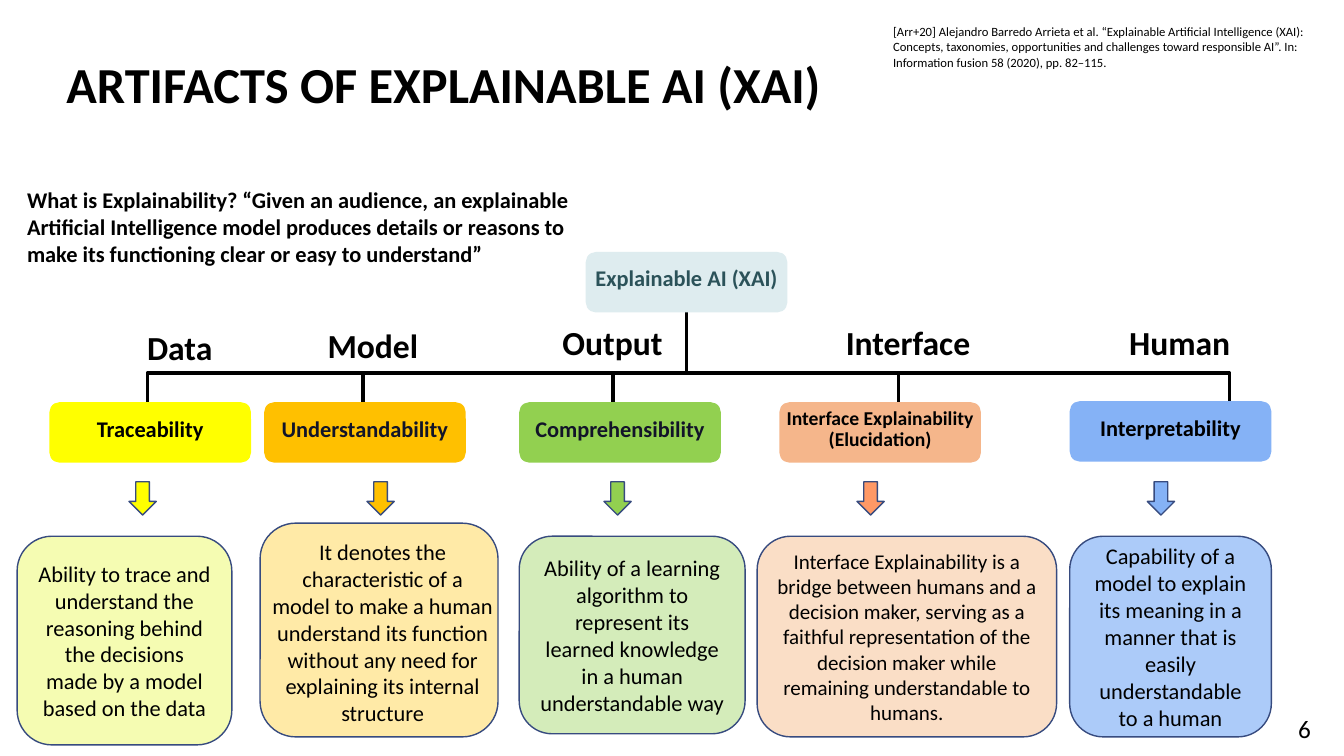
"""Build the slide on artifacts of explainable AI."""
import pptx
import pptx.dml.color
import pptx.enum.shapes
import pptx.enum.text
import pptx.oxml
import pptx.oxml.ns
import pptx.util

RGB = pptx.dml.color.RGBColor
KIND = pptx.enum.shapes.MSO_SHAPE
JOIN = pptx.enum.shapes.MSO_CONNECTOR
ANCHOR = pptx.enum.text.MSO_ANCHOR
ALIGN = pptx.enum.text.PP_ALIGN
SCALE = 9144
BLACK = RGB(0x00, 0x00, 0x00)
NAVY = RGB(0x12, 0x14, 0x29)
TEAL = RGB(0x2B, 0x52, 0x59)
MIST = RGB(0xDE, 0xEC, 0xEF)
EDGE = RGB(0x37, 0x4B, 0x7F)
YELLOW = RGB(0xFF, 0xFF, 0x00)
AMBER = RGB(0xFF, 0xC0, 0x00)
GREEN = RGB(0x92, 0xD0, 0x50)
PEACH = RGB(0xF5, 0xB6, 0x8B)
CORAL = RGB(0xFF, 0x99, 0x66)
BLUE = RGB(0x85, 0xB2, 0xF6)
LEMON = RGB(0xF5, 0xFC, 0xB2)
CREAM = RGB(0xFF, 0xEA, 0xA7)
MINT = RGB(0xD4, 0xEC, 0xBA)
SAND = RGB(0xFA, 0xDE, 0xC6)
SKY = RGB(0xAC, 0xCB, 0xF9)

TAGS = [
    ("Traceability", 49, 399, YELLOW, BLACK, 16),
    ("Understandability", 262, 399, AMBER, NAVY, 16),
    ("Comprehensibility", 515, 399, GREEN, NAVY, 16),
    ("Interface Explainability (Elucidation)", 773, 399, PEACH, BLACK, 14),
    ("Interpretability", 1061, 398, BLUE, BLACK, 16),
]
ARROWS = [(128, YELLOW), (364, AMBER), (599, GREEN), (850, CORAL), (1138, BLUE)]
CARDS = [
    ((17, 532, 213, 207), LEMON, 16,
     "Ability to trace and understand the reasoning behind the decisions "
     "made by a model based on the data"),
    ((258, 519, 236, 212), CREAM, 16, ""),
    ((515, 532, 224, 196), MINT, 16,
     "Ability of a learning algorithm to represent its learned knowledge "
     "in a human understandable way"),
    ((751, 532, 297, 199), SAND, 15,
     "Interface Explainability is a bridge between humans and a decision "
     "maker, serving as a faithful representation of the decision maker "
     "while remaining understandable to humans."),
    ((1061, 532, 200, 199), SKY, 16,
     "Capability of a model to explain its meaning in a manner that is "
     "easily understandable to a human"),
]
HEADS = [("Data", 136, 319), ("Model", 315, 317), ("Output", 548, 314),
         ("Interface", 829, 314), ("Human", 1110, 314)]
STEMS = [(681, 279, 369), (360, 369, 410), (608, 369, 410), (891, 372, 414)]
BENDS = [((675, 370), (146, 399), 100000), ((674, 370), (1218, 398), 100300)]


def px(*nums):
    """Turn px lengths into EMU."""
    return [pptx.util.Emu(num * SCALE) for num in nums]


def write(frame, words, size, color=BLACK, bold=False, align=ALIGN.LEFT,
          space=1.0, anchor=ANCHOR.TOP, pad=(10, 5, 10, 5)):
    """Fill a text frame, one paragraph for each line of words."""
    left, top, right, low = px(*pad)
    setup = {"word_wrap": True, "vertical_anchor": anchor, "margin_left": left,
             "margin_top": top, "margin_right": right, "margin_bottom": low}
    for key, value in setup.items():
        setattr(frame, key, value)
    frame.text = words
    look = {"name": "Calibri", "size": pptx.util.Pt(size), "bold": bold}
    for para in frame.paragraphs:
        para.alignment = align
        para.line_spacing = space
        for run in para.runs:
            for key, value in look.items():
                setattr(run.font, key, value)
            run.font.color.rgb = color


def label(slide, box, words, size, **style):
    """Add a plain text box."""
    write(slide.shapes.add_textbox(*px(*box)).text_frame, words, size, **style)


def block(slide, kind, box, fill, edge=None):
    """Add a filled shape with an optional outline."""
    shape = slide.shapes.add_shape(kind, *px(*box))
    shape.shadow.inherit = False
    shape.fill.solid()
    shape.fill.fore_color.rgb = fill
    if edge is None:
        shape.line.fill.background()
    else:
        shape.line.color.rgb = edge
        shape.line.width = pptx.util.Pt(1)
    return shape


def tag(slide, words, left, top, fill, color, size):
    """Add a rounded name box of the tree."""
    shape = block(slide, KIND.ROUNDED_RECTANGLE, (left, top, 200, 60), fill)
    write(shape.text_frame, words, size, color=color, bold=True,
          align=ALIGN.CENTER, space=0.9, anchor=ANCHOR.MIDDLE, pad=(1, 1, 1, 6))


def card(slide, box, fill, size, words):
    """Add a rounded box that explains a term."""
    shape = block(slide, KIND.ROUNDED_RECTANGLE, box, fill, EDGE)
    if words:
        write(shape.text_frame, words, size, align=ALIGN.CENTER,
              anchor=ANCHOR.MIDDLE)


def wire(slide, start, end, bend=None):
    """Add a black line, with an elbow at bend if given."""
    kind = JOIN.STRAIGHT if bend is None else JOIN.ELBOW
    line = slide.shapes.add_connector(kind, *px(*start, *end))
    line.line.color.rgb = BLACK
    line.line.width = pptx.util.Pt(2.25)
    props = line._element.spPr
    props.append(pptx.oxml.parse_xml(
        "<a:effectLst %s/>" % pptx.oxml.ns.nsdecls("a")))
    if bend is not None:
        guides = props.find(".//" + pptx.oxml.ns.qn("a:avLst"))
        guides.append(pptx.oxml.parse_xml(
            '<a:gd %s name="adj1" fmla="val %d"/>'
            % (pptx.oxml.ns.nsdecls("a"), bend)))


def main():
    """Build and save the slide."""
    deck = pptx.Presentation()
    deck.slide_width, deck.slide_height = px(1333, 750)
    slide = deck.slides.add_slide(deck.slide_layouts[6])

    label(slide, (56, 52, 1150, 70), "ARTIFACTS OF EXPLAINABLE AI (XAI)", 36,
          bold=True, space=0.9, anchor=ANCHOR.MIDDLE)
    label(slide, (1254, 703, 56, 40), "6", 18, align=ALIGN.RIGHT)
    for left, top, low in STEMS:
        wire(slide, (left, top), (left, low))
    for start, end, bend in BENDS:
        wire(slide, start, end, bend)
    tag(slide, "Explainable AI (XAI)", 581, 250, MIST, TEAL, 16)
    for row in TAGS:
        tag(slide, *row)
    for left, fill in ARROWS:
        block(slide, KIND.DOWN_ARROW, (left, 478, 27, 33), fill, EDGE)
    for row in CARDS:
        card(slide, *row)
    for words, left, top in HEADS:
        label(slide, (left, top, 181, 50), words, 24, bold=True)
    label(slide, (260, 529, 239, 199),
          "It denotes the characteristic of a model to make a human understand "
          "its function without any need for explaining its internal\nstructure",
          16, align=ALIGN.CENTER)
    label(slide, (876, 19, 457, 56),
          "[Arr+20] Alejandro Barredo Arrieta et al. “Explainable Artificial "
          "Intelligence (XAI): Concepts, taxonomies, opportunities and "
          "challenges toward responsible AI”. In: Information fusion 58 "
          "(2020), pp. 82–115.", 9)
    label(slide, (17, 180, 564, 91),
          "What is Explainability? “Given an audience, an explainable "
          "Artificial Intelligence model produces details or reasons to make "
          "its functioning clear or easy to understand”", 16, bold=True)
    deck.save("out.pptx")


if __name__ == "__main__":
    main()
